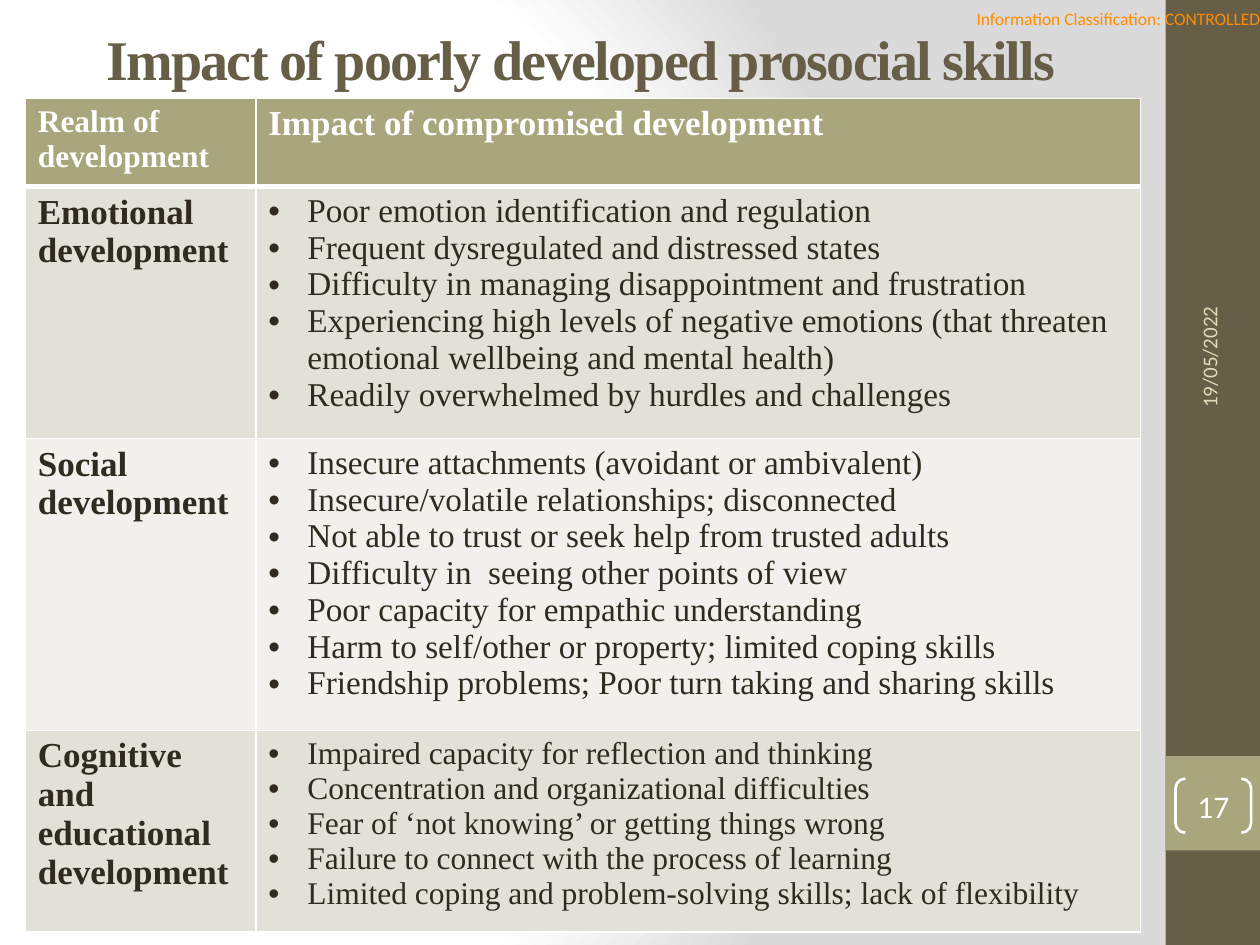
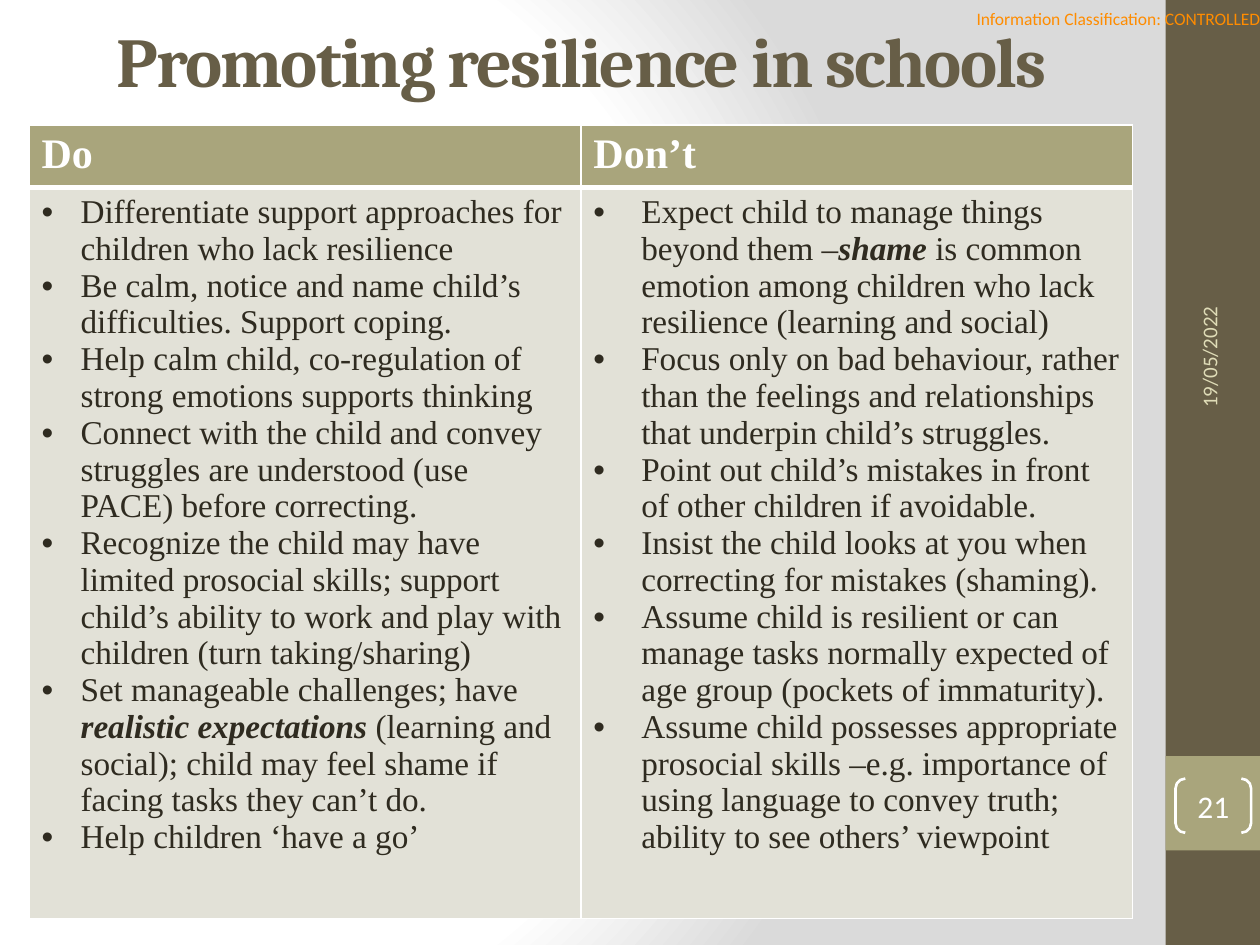
from lxml.etree import SubElement
from pptx import Presentation
from pptx.dml.color import RGBColor
from pptx.enum.shapes import MSO_SHAPE
from pptx.enum.text import MSO_ANCHOR, PP_ALIGN
from pptx.oxml import parse_xml
from pptx.oxml.ns import nsdecls, qn
from pptx.util import Inches, Pt

COLORS = {
    "brown": "675E47",
    "olive": "A9A57C",
    "dark band": "E2E1D7",
    "light band": "F1F0EC",
    "ink": "2F2B20",
    "sand": "DFDCB7",
    "orange": "FF8C00",
    "white": "FFFFFF",
    "grey": "DADADA",
}
SERIF = "Times New Roman"
SANS = "Calibri"

EMOTIONAL = [
    "Poor emotion identification and regulation",
    "Frequent dysregulated and distressed states",
    "Difficulty in managing disappointment and frustration",
    "Experiencing high levels of negative emotions (that threaten emotional wellbeing and mental health)",
    "Readily overwhelmed by hurdles and challenges",
]
SOCIAL = [
    "Insecure attachments (avoidant or ambivalent)",
    "Insecure/volatile relationships; disconnected",
    "Not able to trust or seek help from trusted adults",
    "Difficulty in  seeing other points of view",
    "Poor capacity for empathic understanding",
    "Harm to self/other or property; limited coping skills",
    "Friendship problems; Poor turn taking and sharing skills",
]
COGNITIVE = [
    "Impaired capacity for reflection and thinking",
    "Concentration and organizational difficulties",
    "Fear of ‘not knowing’ or getting things wrong",
    "Failure to connect with the process of learning",
    "Limited coping and problem-solving skills; lack of flexibility",
]
DO = [
    "Differentiate support approaches for children who lack resilience",
    "Be calm, notice and name child’s difficulties. Support coping.",
    "Help calm child, co-regulation of strong emotions supports thinking",
    "Connect with the child and convey struggles are understood (use PACE) before correcting.",
    "Recognize the child may have limited prosocial skills; support child’s ability to work and play with children (turn taking/sharing)",
    "Set manageable challenges; have *realistic expectations *(learning and social); child may feel shame if facing tasks they can’t do.",
    "Help children ‘have a go’",
]
DONT = [
    "Expect child to manage things beyond them –*shame* is common emotion among children who lack resilience (learning and social)",
    "Focus only on bad behaviour, rather than the feelings and relationships that underpin child’s struggles.",
    "Point out child’s mistakes in front of other children if avoidable.",
    "Insist the child looks at you when correcting for mistakes (shaming).",
    "Assume child is resilient or can manage tasks normally expected of age group (pockets of immaturity).",
    "Assume child possesses appropriate prosocial skills –e.g. importance of using language to convey truth; ability to see others’ viewpoint",
]


def rgb(color):
    return RGBColor.from_string(COLORS[color])


class Deck:
    def __init__(self):
        self.presentation = Presentation()
        self.presentation.slide_width = Inches(10)
        self.presentation.slide_height = Inches(7.5)
        self.slide = None

    def add_slide(self, title, title_box, title_font, title_size, number):
        self.slide = self.presentation.slides.add_slide(self.presentation.slide_layouts[6])
        self.background()
        self.shape(MSO_SHAPE.RECTANGLE, (9.25, 0, 0.75, 7.5), "brown")
        self.shape(MSO_SHAPE.RECTANGLE, (9.25, 6, 0.75, 0.75), "olive")
        self.text((7.37, 0, 2.63, 0.29), "Information Classification: CONTROLLED",
                  SANS, 10, "orange", align=PP_ALIGN.RIGHT, inset=0)
        heading = self.text(title_box, title, title_font, title_size, "brown",
                            align=PP_ALIGN.CENTER, bold=True)
        for run in heading.text_frame.paragraphs[0].runs:
            run._r.get_or_add_rPr().set("spc", "-100")
        date = self.text((8.26, 1.8, 2.67, 0.4), "19/05/2022", SANS, 12, "sand")
        date.rotation = 270
        self.page_number(number)

    def background(self):
        fill = self.slide.background.fill
        fill.solid()
        stops = "".join(
            f'<a:gs pos="{position}"><a:srgbClr val="{COLORS[color]}"/></a:gs>'
            for position, color in ((0, "white"), (75000, "white"), (100000, "grey")))
        gradient = parse_xml(
            f'<a:gradFill {nsdecls("a")} rotWithShape="1"><a:gsLst>{stops}</a:gsLst>'
            '<a:path path="circle"><a:fillToRect l="20000" t="50000" r="100000" b="50000"/>'
            '</a:path></a:gradFill>')
        solid = self.slide.background._cSld.find(".//" + qn("p:bgPr")).find(qn("a:solidFill"))
        solid.getparent().replace(solid, gradient)

    def shape(self, kind, box, fill=None):
        shape = self.slide.shapes.add_shape(kind, *map(Inches, box))
        shape.shadow.inherit = False
        shape.line.fill.background()
        if fill:
            shape.fill.solid()
            shape.fill.fore_color.rgb = rgb(fill)
        else:
            shape.fill.background()
        return shape

    def page_number(self, number):
        bracket = self.shape(MSO_SHAPE.DOUBLE_BRACKET, (9.33, 6.18, 0.6, 0.43))
        bracket.adjustments[0] = 0.18
        bracket.line.color.rgb = rgb("white")
        bracket.line.width = Pt(1.5)
        self.fill_frame(bracket.text_frame, str(number), SANS, 18, "white",
                        align=PP_ALIGN.CENTER, inset=0)

    def text(self, box, content, font, size, color, **options):
        shape = self.slide.shapes.add_textbox(*map(Inches, box))
        self.fill_frame(shape.text_frame, content, font, size, color, **options)
        return shape

    def fill_frame(self, frame, content, font, size, color,
                   align=PP_ALIGN.LEFT, bold=False, inset=None):
        frame.word_wrap = True
        frame.vertical_anchor = MSO_ANCHOR.MIDDLE
        if inset is not None:
            frame.margin_left = frame.margin_right = Inches(inset)
            frame.margin_top = frame.margin_bottom = Inches(inset)
        paragraph = frame.paragraphs[0]
        paragraph.alignment = align
        self.fill_paragraph(paragraph, content, font, size, color, bold)

    def fill_paragraph(self, paragraph, content, font, size, color, bold=False):
        paragraph.font.name = font
        paragraph.font.size = Pt(size)
        paragraph.font.bold = bold
        paragraph.font.color.rgb = rgb(color)
        for index, part in enumerate(content.split("*")):
            run = paragraph.add_run()
            run.text = part
            if index % 2:
                run.font.bold = run.font.italic = True

    def table(self, left, top, widths, heights):
        table = self.slide.shapes.add_table(
            len(heights), len(widths), Inches(left), Inches(top),
            Inches(sum(widths)), Inches(sum(heights))).table
        table.horz_banding = False
        for column, width in zip(table.columns, widths):
            column.width = Inches(width)
        for row, height in zip(table.rows, heights):
            row.height = Inches(height)
        return table

    def cell(self, cell, fill, bottom=1):
        properties = cell._tc.get_or_add_tcPr()
        for side, width in (("L", 1), ("R", 1), ("T", 1), ("B", bottom)):
            line = SubElement(properties, qn(f"a:ln{side}"), w=str(Pt(width)))
            solid = SubElement(line, qn("a:solidFill"))
            SubElement(solid, qn("a:srgbClr"), val=COLORS["white"])
        cell.fill.solid()
        cell.fill.fore_color.rgb = rgb(fill)

    def header(self, cell, content, size):
        self.cell(cell, "olive", bottom=3)
        self.fill_paragraph(cell.text_frame.paragraphs[0], content, SERIF, size, "white", bold=True)

    def label(self, cell, content, fill):
        self.cell(cell, fill)
        self.fill_paragraph(cell.text_frame.paragraphs[0], content, SERIF, 20, "ink", bold=True)

    def bullets(self, cell, items, size, fill, indent=0.31):
        self.cell(cell, fill)
        frame = cell.text_frame
        for index, item in enumerate(items):
            paragraph = frame.add_paragraph() if index else frame.paragraphs[0]
            properties = paragraph._p.get_or_add_pPr()
            properties.set("marL", str(Inches(indent)))
            properties.set("indent", str(-Inches(indent)))
            SubElement(properties, qn("a:buFont"), typeface="Arial")
            SubElement(properties, qn("a:buChar"), char="•")
            self.fill_paragraph(paragraph, item, SERIF, size, "ink")


def impact_slide(deck):
    deck.add_slide("Impact of poorly developed prosocial skills",
                   (0.37, 0.16, 8.48, 0.61), SERIF, 32, 17)
    table = deck.table(0.2, 0.78, (1.83, 7.02), (0.68, 1.93, 2.23, 1.54))
    deck.header(table.cell(0, 0), "Realm of development", 18)
    deck.header(table.cell(0, 1), "Impact of compromised development", 20)
    realms = (
        ("Emotional development", EMOTIONAL, 19, "dark band"),
        ("Social development", SOCIAL, 19, "light band"),
        ("Cognitive and educational development", COGNITIVE, 18, "dark band"),
    )
    for row, (realm, impacts, size, fill) in enumerate(realms, start=1):
        deck.label(table.cell(row, 0), realm, fill)
        deck.bullets(table.cell(row, 1), impacts, size, fill)


def resilience_slide(deck):
    deck.add_slide("Promoting resilience in schools",
                   (0.23, 0.14, 8.77, 0.67), "Cambria", 40, 21)
    table = deck.table(0.23, 0.99, (4.38, 4.38), (0.46, 5.35))
    columns = (("Do", DO, 0.31), ("Don’t", DONT, 0.38))
    for column, (heading, advice, indent) in enumerate(columns):
        deck.header(table.cell(0, column), heading, 24)
        deck.bullets(table.cell(1, column), advice, 19, "dark band", indent)


def main():
    deck = Deck()
    impact_slide(deck)
    resilience_slide(deck)
    deck.presentation.save("out.pptx")


if __name__ == "__main__":
    main()
